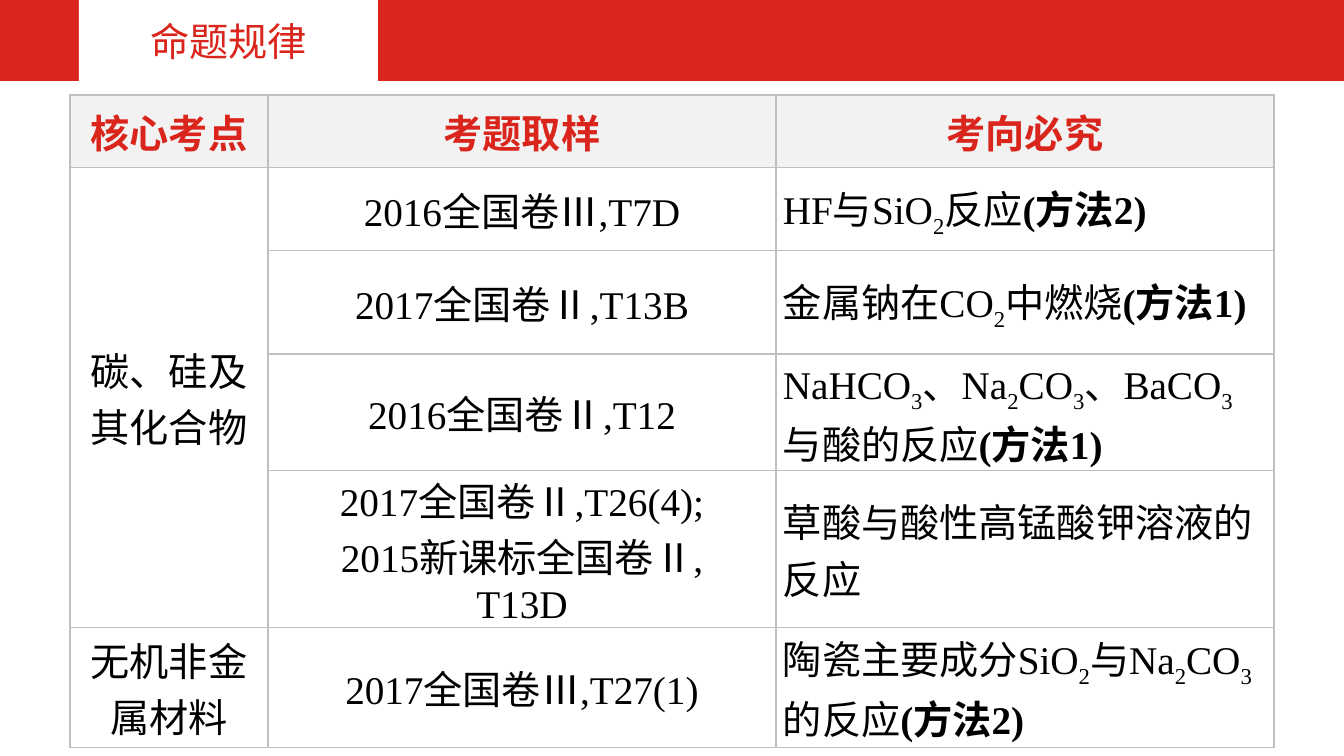
"""Build the slide that lists exam points on carbon, silicon and their compounds."""
import lxml.etree
import pptx
import pptx.dml.color
import pptx.enum.shapes
import pptx.enum.text
import pptx.oxml.ns
import pptx.util

TITLE = "命题规律"
HEADINGS = ["核心考点", "考题取样", "考向必究"]
TOPICS = [
    ("碳、硅及其化合物", [
        ("2016全国卷Ⅲ,T7D", "HF与SiO_2反应(方法2)"),
        ("2017全国卷Ⅱ,T13B", "金属钠在CO_2中燃烧(方法1)"),
        ("2016全国卷Ⅱ,T12", "NaHCO_3、Na_2CO_3、BaCO_3与酸的反应(方法1)"),
        ("2017全国卷Ⅱ,T26(4);\n2015新课标全国卷Ⅱ,\nT13D", "草酸与酸性高锰酸钾溶液的反应"),
    ]),
    ("无机非金属材料", [
        ("2017全国卷Ⅲ,T27(1)", "陶瓷主要成分SiO_2与Na_2CO_3的反应(方法2)"),
    ]),
]
METHOD = "(方法"

SLIDE_SIZE = (1344, 756)
BANNER = (0, 0, 1344, 81)
TITLE_TAB = (79, 0, 299, 81)
TABLE_ORIGIN = (70, 95)
COLUMN_WIDTHS = [198, 508, 498]
ROW_HEIGHTS = [70, 83, 80, 103, 155, 103]
HEADING_INSETS = (16, 8)
BODY_INSETS = (7, 0)

RED = pptx.dml.color.RGBColor(0xDA, 0x25, 0x1C)
WHITE = pptx.dml.color.RGBColor(0xFF, 0xFF, 0xFF)
BLACK = pptx.dml.color.RGBColor(0, 0, 0)
PALE_GREY = pptx.dml.color.RGBColor(0xF2, 0xF2, 0xF2)
RULE_GREY = pptx.dml.color.RGBColor(0xBF, 0xBF, 0xBF)
FONT = "Times New Roman"
CENTER = pptx.enum.text.PP_ALIGN.CENTER
LEFT = pptx.enum.text.PP_ALIGN.LEFT
MIDDLE = pptx.enum.text.MSO_ANCHOR.MIDDLE


def px(length):
    return pptx.util.Emu(round(length * 914400 / 100.8))


def split_runs(line):
    """Yield (text, is_subscript, is_bold); an underscore lowers the next character."""
    formula, method, number = line.partition(METHOD)
    first, *lowered = formula.split("_")
    yield first, False, False
    for piece in lowered:
        yield piece[0], True, False
        yield piece[1:], False, False
    yield method + number, False, True


def write(frame, text, color=BLACK, bold=False, align=CENTER, size=28):
    frame.word_wrap = True
    for index, line in enumerate(text.split("\n")):
        paragraph = frame.add_paragraph() if index else frame.paragraphs[0]
        paragraph.alignment = align
        for words, lowered, strong in split_runs(line):
            if not words:
                continue
            run = paragraph.add_run()
            run.text = words
            run.font.size = pptx.util.Pt(size)
            run.font.name = FONT
            run.font.bold = bold or strong
            run.font.color.rgb = color
            if lowered:
                run.font._element.set("baseline", "-25000")


def add_block(slide, box, color):
    block = slide.shapes.add_shape(
        pptx.enum.shapes.MSO_SHAPE.RECTANGLE, *map(px, box))
    block.shadow.inherit = False
    block.fill.solid()
    block.fill.fore_color.rgb = color
    block.line.fill.background()
    return block


def rule_cell(cell):
    properties = cell._tc.get_or_add_tcPr()
    for index, side in enumerate(("lnL", "lnR", "lnT", "lnB")):
        rule = lxml.etree.Element(
            pptx.oxml.ns.qn("a:" + side), w=str(pptx.util.Pt(1)))
        fill = lxml.etree.SubElement(rule, pptx.oxml.ns.qn("a:solidFill"))
        lxml.etree.SubElement(fill, pptx.oxml.ns.qn("a:srgbClr"), val=str(RULE_GREY))
        properties.insert(index, rule)


def fill_cell(cell, text, insets=BODY_INSETS, **format):
    cell.vertical_anchor = MIDDLE
    cell.margin_left = cell.margin_right = px(insets[0])
    cell.margin_top = cell.margin_bottom = px(insets[1])
    write(cell.text_frame, text, **format)


def add_topics(slide):
    exam_points = slide.shapes.add_table(
        len(ROW_HEIGHTS), len(COLUMN_WIDTHS), *map(px, TABLE_ORIGIN),
        px(sum(COLUMN_WIDTHS)), px(sum(ROW_HEIGHTS))).table
    exam_points.first_row = exam_points.horz_banding = False
    for column, width in zip(exam_points.columns, COLUMN_WIDTHS):
        column.width = px(width)
    for row, height in zip(exam_points.rows, ROW_HEIGHTS):
        row.height = px(height)
    for cell in exam_points.iter_cells():
        cell.fill.background()
        rule_cell(cell)

    for column, heading in enumerate(HEADINGS):
        cell = exam_points.cell(0, column)
        cell.fill.solid()
        cell.fill.fore_color.rgb = PALE_GREY
        fill_cell(cell, heading, HEADING_INSETS, color=RED, bold=True)

    row = 1
    for topic, questions in TOPICS:
        topic_cell = exam_points.cell(row, 0)
        if len(questions) > 1:
            topic_cell.merge(exam_points.cell(row + len(questions) - 1, 0))
        fill_cell(topic_cell, topic)
        for question, focus in questions:
            fill_cell(exam_points.cell(row, 1), question)
            fill_cell(exam_points.cell(row, 2), focus, align=LEFT)
            row += 1


def main():
    deck = pptx.Presentation()
    deck.slide_width, deck.slide_height = map(px, SLIDE_SIZE)
    slide = deck.slides.add_slide(deck.slide_layouts[6])
    add_block(slide, BANNER, RED)
    title_tab = add_block(slide, TITLE_TAB, WHITE)
    title_tab.text_frame.vertical_anchor = MIDDLE
    write(title_tab.text_frame, TITLE, color=RED)
    add_topics(slide)
    deck.save("out.pptx")


if __name__ == "__main__":
    main()
